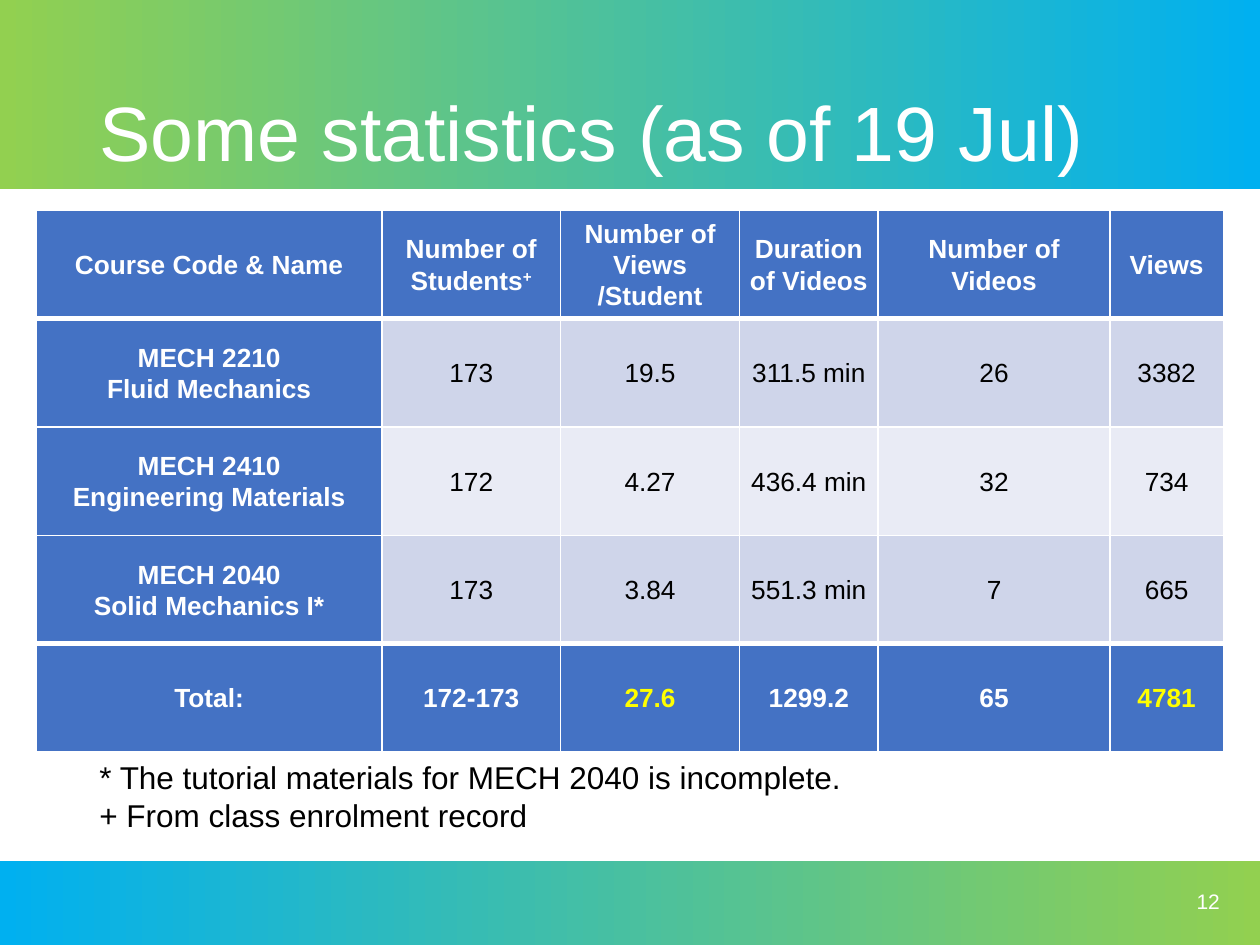
"""Build the course video statistics slide."""
from dataclasses import dataclass

from lxml import etree
from pptx import Presentation
from pptx.dml.color import RGBColor
from pptx.enum.shapes import MSO_SHAPE
from pptx.enum.text import MSO_ANCHOR, MSO_AUTO_SIZE, PP_ALIGN
from pptx.oxml.ns import qn
from pptx.util import Inches, Pt

RECTANGLE = MSO_SHAPE.RECTANGLE
TOP, MIDDLE = MSO_ANCHOR.TOP, MSO_ANCHOR.MIDDLE
LEFT, CENTER, RIGHT = PP_ALIGN.LEFT, PP_ALIGN.CENTER, PP_ALIGN.RIGHT
NO_AUTOFIT = MSO_AUTO_SIZE.NONE
SLIDE_WIDTH, SLIDE_HEIGHT = Inches(10), Inches(7.5)
TITLE_ONLY = 5


@dataclass(frozen=True)
class Theme:
    font: str = "Arial"
    white: str = "FFFFFF"
    black: str = "000000"
    highlight: str = "FFFF00"
    heading: str = "4472C4"
    stripes: tuple[str, str] = ("CFD5EA", "E9EBF5")
    band_start: str = "00B0F0"
    band_end: str = "92D050"
    title_size: int = 44
    note_size: int = 18
    table_size: int = 15
    number_size: int = 12
    thin: int = 1
    thick: int = 3


@dataclass(frozen=True)
class Area:
    """Position and size as percentages of the slide."""
    left: float
    top: float
    width: float
    height: float

    def box(self) -> tuple[int, int, int, int]:
        return (
            round(SLIDE_WIDTH * self.left / 100),
            round(SLIDE_HEIGHT * self.top / 100),
            round(SLIDE_WIDTH * self.width / 100),
            round(SLIDE_HEIGHT * self.height / 100),
        )


@dataclass(frozen=True)
class Band:
    area: Area
    rotation: int


THEME = Theme()
BANDS = (
    Band(Area(0, 0, 100, 20), 180),
    Band(Area(0, 91.1, 100, 8.9), 0),
)
TITLE_AREA = Area(6.9, 8.9, 86.2, 11.2)
TABLE_AREA = Area(2.9, 22.25, 94.2, 57.33)
NUMBER_AREA = Area(75.3, 92.7, 22.5, 5.3)
NOTES_AREA = Area(6.9, 79.6, 85.6, 9.4)
COLUMN_SHARES = (27.4, 14.2, 14.2, 11, 18.4, 9)
SUPERSCRIPT_MARK = "^"
HIGHLIGHTED_TOTALS = ("27.6", "4781")
ROWS = (
    ("Course Code & Name", "Number of Students^+", "Number of Views\n/Student",
     "Duration of Videos", "Number of Videos", "Views"),
    ("MECH 2210\nFluid Mechanics", "173", "19.5", "311.5 min", "26", "3382"),
    ("MECH 2410\nEngineering Materials", "172", "4.27", "436.4 min", "32", "734"),
    ("MECH 2040\nSolid Mechanics I*", "173", "3.84", "551.3 min", "7", "665"),
    ("Total:", "172-173", "27.6", "1299.2", "65", "4781"),
)


def write_text(text_frame, text: str, *, size: int, color: str, bold: bool = False,
               align=LEFT, line_spacing: float = 1.0) -> None:
    """Write lines as paragraphs, raising whatever follows the superscript mark."""
    for index, line in enumerate(text.split("\n")):
        paragraph = text_frame.add_paragraph() if index else text_frame.paragraphs[0]
        paragraph.alignment = align
        paragraph.line_spacing = line_spacing
        for part_index, part in enumerate(line.split(SUPERSCRIPT_MARK)):
            run = paragraph.add_run()
            run.text = part
            run.font.name = THEME.font
            run.font.size = Pt(size)
            run.font.bold = bold
            run.font.color.rgb = RGBColor.from_string(color)
            if part_index:
                run.font._element.set("baseline", "30000")


def add_band(slide, band: Band) -> None:
    shape = slide.shapes.add_shape(RECTANGLE, *band.area.box())
    shape.shadow.inherit = False
    shape.rotation = band.rotation
    shape.line.fill.background()
    shape.fill.gradient()
    shape.fill.gradient_angle = 0
    for stop, color in zip(shape.fill.gradient_stops, (THEME.band_start, THEME.band_end)):
        stop.color.rgb = RGBColor.from_string(color)


def place_title(slide, text: str) -> None:
    title = slide.shapes.title
    title.left, title.top, title.width, title.height = TITLE_AREA.box()
    title.text_frame.auto_size = NO_AUTOFIT
    title.text_frame.vertical_anchor = MIDDLE
    write_text(title.text_frame, text, size=THEME.title_size, color=THEME.white,
               line_spacing=0.9)
    slide.shapes._spTree.append(title._element)


def add_text(slide, area: Area, text: str, *, anchor=TOP, **text_format) -> None:
    text_frame = slide.shapes.add_textbox(*area.box()).text_frame
    text_frame.word_wrap = True
    text_frame.vertical_anchor = anchor
    write_text(text_frame, text, **text_format)


def set_borders(cell, top: int, bottom: int) -> None:
    properties = cell._tc.get_or_add_tcPr()
    widths = {"a:lnL": THEME.thin, "a:lnR": THEME.thin, "a:lnT": top, "a:lnB": bottom}
    for tag, width in widths.items():
        line = etree.SubElement(properties, qn(tag), w=str(Pt(width)))
        fill = etree.SubElement(line, qn("a:solidFill"))
        etree.SubElement(fill, qn("a:srgbClr"), val=THEME.white)


def format_cell(cell, text: str, row: int, column: int) -> None:
    last_row = len(ROWS) - 1
    is_heading = row in (0, last_row) or column == 0
    set_borders(
        cell,
        top=THEME.thick if row in (1, last_row) else THEME.thin,
        bottom=THEME.thick if row in (0, last_row - 1) else THEME.thin,
    )
    cell.fill.solid()
    fill = THEME.heading if is_heading else THEME.stripes[(row - 1) % 2]
    cell.fill.fore_color.rgb = RGBColor.from_string(fill)
    cell.vertical_anchor = MIDDLE
    cell.margin_left = cell.margin_right = Inches(0.07)
    cell.margin_top = cell.margin_bottom = 0
    color = THEME.white if is_heading else THEME.black
    if row == last_row and text in HIGHLIGHTED_TOTALS:
        color = THEME.highlight
    write_text(cell.text_frame, text, size=THEME.table_size, color=color,
               bold=is_heading, align=CENTER, line_spacing=1.07)


def add_statistics_table(slide) -> None:
    frame = slide.shapes.add_table(len(ROWS), len(COLUMN_SHARES), *TABLE_AREA.box())
    table = frame.table
    table.first_col = table.last_row = True
    for column, share in zip(table.columns, COLUMN_SHARES):
        column.width = round(SLIDE_WIDTH * share / 100)
    for row, texts in enumerate(ROWS):
        for column, text in enumerate(texts):
            format_cell(table.cell(row, column), text, row, column)


def main() -> None:
    presentation = Presentation()
    presentation.slide_width, presentation.slide_height = SLIDE_WIDTH, SLIDE_HEIGHT
    slide = presentation.slides.add_slide(presentation.slide_layouts[TITLE_ONLY])
    for band in BANDS:
        add_band(slide, band)
    place_title(slide, "Some statistics (as of 19 Jul)")
    add_statistics_table(slide)
    add_text(slide, NUMBER_AREA, "12", anchor=MIDDLE, align=RIGHT,
             size=THEME.number_size, color=THEME.white)
    add_text(slide, NOTES_AREA,
             "* The tutorial materials for MECH 2040 is incomplete.\n"
             "+ From class enrolment record",
             size=THEME.note_size, color=THEME.black)
    presentation.save("out.pptx")


if __name__ == "__main__":
    main()
